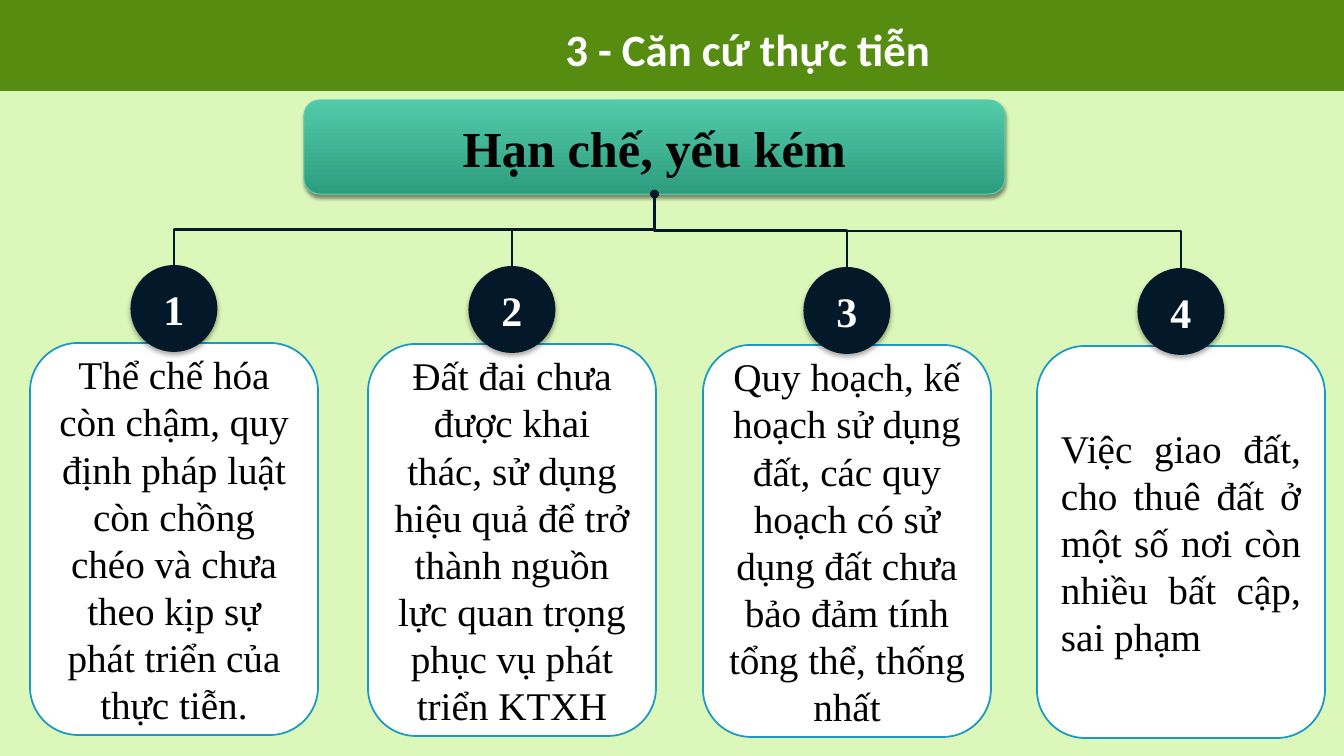
"""Build the slide of four numbered shortcomings under one heading."""
from lxml import etree
from pptx import Presentation
from pptx.dml.color import RGBColor
from pptx.enum.shapes import MSO_CONNECTOR, MSO_SHAPE
from pptx.enum.text import MSO_ANCHOR, MSO_AUTO_SIZE, PP_ALIGN
from pptx.oxml.ns import qn
from pptx.util import Emu, Pt

RECTANGLE = MSO_SHAPE.RECTANGLE
ROUNDED = MSO_SHAPE.ROUNDED_RECTANGLE
OVAL = MSO_SHAPE.OVAL
ELBOW = MSO_CONNECTOR.ELBOW
TOP, MIDDLE = MSO_ANCHOR.TOP, MSO_ANCHOR.MIDDLE
CENTER, JUSTIFY = PP_ALIGN.CENTER, PP_ALIGN.JUSTIFY
NO_AUTOFIT = MSO_AUTO_SIZE.NONE
SERIF = "Times New Roman"
NAVY = "031828"
CARD_TOP, CARD_WIDTH, CARD_HEIGHT = 343, 288, 392
BADGE_SIZE, BADGE_RISE = 87, 78
CARDS = [
    (30, CENTER, "Thể chế hóa còn chậm, quy định pháp luật còn chồng chéo "
     "và chưa theo kịp sự phát triển của thực tiễn."),
    (368, CENTER, "Đất đai chưa được khai thác, sử dụng hiệu quả để trở "
     "thành nguồn lực quan trọng phục vụ phát triển KTXH"),
    (703, CENTER, "Quy hoạch, kế hoạch sử dụng đất, các quy hoạch có sử "
     "dụng đất chưa bảo đảm tính tổng thể, thống nhất"),
    (1037, JUSTIFY, "Việc giao đất, cho thuê đất ở một số nơi còn nhiều "
     "bất cập, sai phạm"),
]


def px(length):
    """Turn pixels into EMU."""
    return Emu(round(length * 914400 / 100.8))


def color(value):
    """Turn a hex string into a colour."""
    return RGBColor.from_string(value)


def write(shape, text, size, font_color, font="Times New Roman", bold=False,
          align=CENTER, anchor=MIDDLE, wrap=True):
    """Put one formatted paragraph into a shape."""
    frame = shape.text_frame
    frame.text = text
    frame.word_wrap = wrap
    frame.auto_size = NO_AUTOFIT
    frame.vertical_anchor = anchor
    paragraph = frame.paragraphs[0]
    paragraph.alignment = align
    paragraph.font.name = font
    paragraph.font.size = Pt(size)
    paragraph.font.bold = bold
    paragraph.font.color.rgb = color(font_color)


def add_block(slide, kind, left, top, width, height, fill, line=None, weight=1.25):
    """Add a plain filled shape, outlined if a line colour is given."""
    shape = slide.shapes.add_shape(kind, px(left), px(top), px(width), px(height))
    shape.shadow.inherit = False
    shape.fill.solid()
    shape.fill.fore_color.rgb = color(fill)
    if line:
        shape.line.color.rgb = color(line)
        shape.line.width = Pt(weight)
    else:
        shape.line.fill.background()
    return shape


def add_shadow(shape, blur, distance, opacity):
    """Cast a soft black shadow straight down."""
    effects = shape._element.spPr.find(qn("a:effectLst"))
    shadow = etree.SubElement(effects, qn("a:outerShdw"), blurRad=str(Pt(blur)),
                              dist=str(Pt(distance)), dir="5400000", rotWithShape="0")
    black = etree.SubElement(shadow, qn("a:srgbClr"), val="000000")
    etree.SubElement(black, qn("a:alpha"), val=str(opacity * 1000))


def add_title(slide, text):
    """Place the white slide title in the green band."""
    title = slide.shapes.title
    title.left, title.top, title.width, title.height = map(px, (167, 17, 1162, 65))
    write(title, text, 32, "FFFFFF", font="Calibri", bold=True, anchor=TOP)


def add_heading(slide, text):
    """Add the green gradient heading box."""
    heading = add_block(slide, ROUNDED, 304, 100, 701, 94, "52CBA9", "5DCEAF", 0.75)
    heading.fill.gradient()
    heading.fill.gradient_angle = 270
    for stop, value in zip(heading.fill.gradient_stops, ("52CBA9", "2E9D7F")):
        stop.color.rgb = color(value)
    add_shadow(heading, 3.1, 1.8, 45)
    write(heading, text, 36, "000000", bold=True)
    return heading


def add_card(slide, number, left, align, text):
    """Add a white card with its numbered badge and return the badge."""
    top = CARD_TOP + number - 1
    card = add_block(slide, ROUNDED, left, top, CARD_WIDTH, CARD_HEIGHT,
                     "FFFFFF", "1999C6")
    write(card, text, 28, "000000", align=align)
    badge = add_block(slide, OVAL, left + (CARD_WIDTH - BADGE_SIZE) / 2,
                      top - BADGE_RISE, BADGE_SIZE, BADGE_SIZE, NAVY)
    add_shadow(badge, 3.5, 2.2, 32)
    write(badge, str(number), 30, "FFFFFF", bold=True, wrap=False)
    return badge


def add_branch(slide, heading, badge):
    """Join the heading to a badge by an elbow that leaves downwards."""
    branch = slide.shapes.add_connector(ELBOW, 0, 0, 0, 0)
    branch.begin_connect(heading, 2)
    branch.end_connect(badge, 0)
    goes_right = branch.end_x > branch.begin_x
    center_x = branch.left + branch.width // 2
    center_y = branch.top + branch.height // 2
    branch.width, branch.height = branch.height, branch.width
    branch.left = center_x - branch.width // 2
    branch.top = center_y - branch.height // 2
    transform = branch._element.spPr.find(qn("a:xfrm"))
    transform.set("rot", "16200000" if goes_right else "5400000")
    transform.set("flipH", "1" if goes_right else "0")
    branch.line.color.rgb = color(NAVY)
    branch.line.width = Pt(1.5)
    properties = branch._element.spPr
    etree.SubElement(properties.find(qn("a:ln")), qn("a:headEnd"), type="oval")
    etree.SubElement(properties, qn("a:effectLst"))


def main():
    """Build and save the slide."""
    presentation = Presentation()
    presentation.slide_width, presentation.slide_height = px(1344), px(756)
    slide = presentation.slides.add_slide(presentation.slide_layouts[5])
    slide.background.fill.solid()
    slide.background.fill.fore_color.rgb = color("568D11")
    add_title(slide, "3 - Căn cứ thực tiễn")
    add_block(slide, RECTANGLE, 0, 92, 1344, 664, "DCF7BA", "DCF7BA")
    heading = add_heading(slide, "Hạn chế, yếu kém")
    badges = [add_card(slide, number, *card) for number, card in enumerate(CARDS, 1)]
    for badge in badges:
        add_branch(slide, heading, badge)
    presentation.save("out.pptx")


if __name__ == "__main__":
    main()
